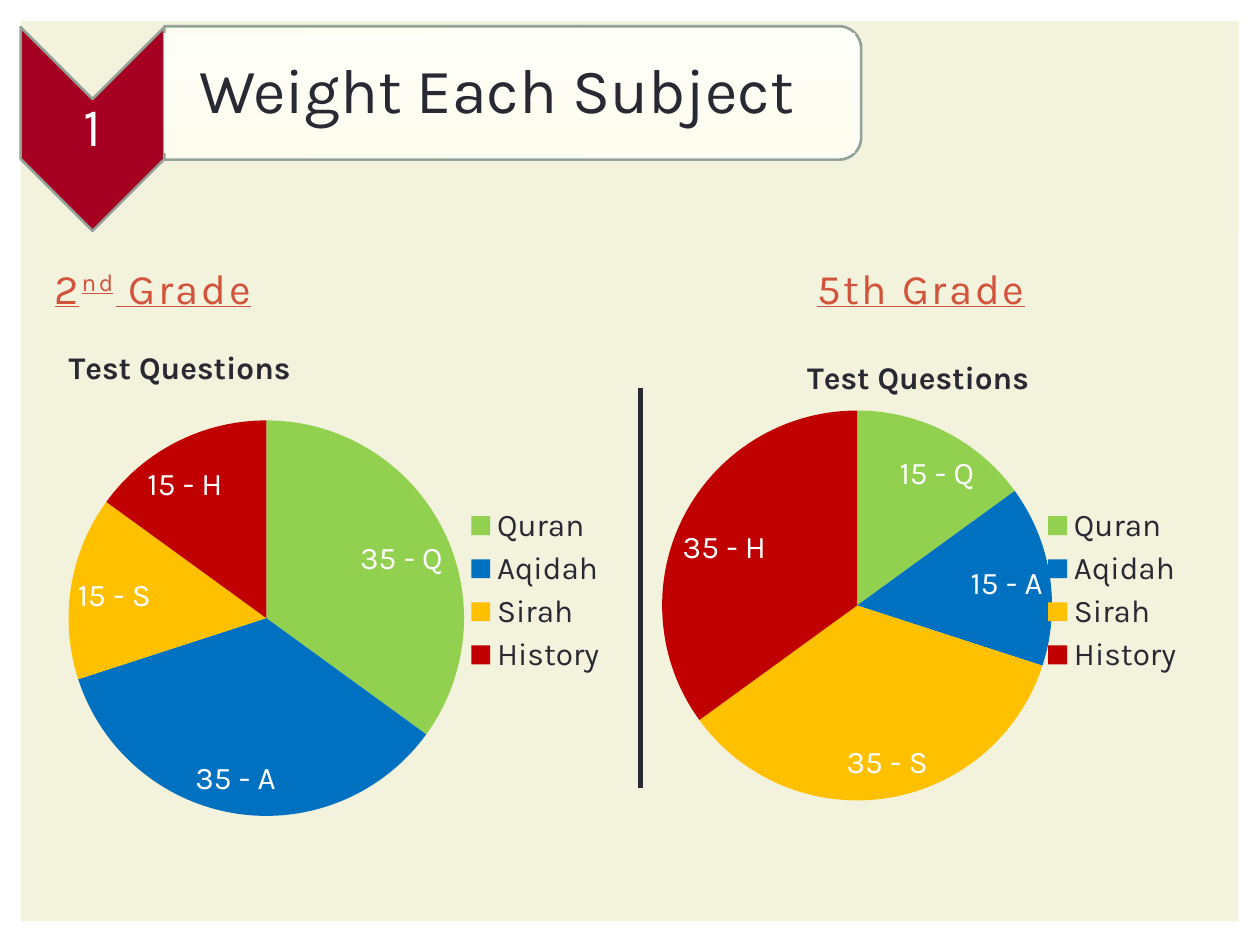
from lxml import etree
from pptx import Presentation
from pptx.chart.data import CategoryChartData
from pptx.dml.color import RGBColor
from pptx.enum.chart import XL_CHART_TYPE, XL_LABEL_POSITION, XL_LEGEND_POSITION
from pptx.enum.shapes import MSO_CONNECTOR, MSO_SHAPE
from pptx.enum.text import MSO_ANCHOR, PP_ALIGN
from pptx.oxml import parse_xml
from pptx.oxml.ns import qn
from pptx.util import Cm, Pt

PIE = XL_CHART_TYPE.PIE
BEST_FIT = XL_LABEL_POSITION.BEST_FIT
LEGEND_RIGHT = XL_LEGEND_POSITION.RIGHT
MIDDLE, BOTTOM = MSO_ANCHOR.MIDDLE, MSO_ANCHOR.BOTTOM
LEFT, CENTER = PP_ALIGN.LEFT, PP_ALIGN.CENTER
RECTANGLE = MSO_SHAPE.RECTANGLE
CHEVRON = MSO_SHAPE.CHEVRON
ROUND_TOP = MSO_SHAPE.ROUND_2_SAME_RECTANGLE
STRAIGHT = MSO_CONNECTOR.STRAIGHT

FONT = "Karla"
CREAM, DARK, RED, GREY, WHITE = "F3F2DC", "292934", "D2533C", "93A299", "FFFFFF"
BANNER_START, BANNER_END = "FDFCEF", "FEFEF9"
SUBJECT_COLORS = {"Quran": "92D050", "Aqidah": "0070C0", "Sirah": "FFC000", "History": "C00000"}
CHART_NAMESPACE = "http://schemas.openxmlformats.org/drawingml/2006/chart"


def color(value):
    return RGBColor.from_string(value)


def set_layout(element, **settings):
    """Give a chart title or plot area a manual layout, in fractions of the chart."""
    for layout in element.findall(qn("c:layout")):
        element.remove(layout)
    layout = parse_xml(f'<c:layout xmlns:c="{CHART_NAMESPACE}"><c:manualLayout/></c:layout>')
    for name, value in settings.items():
        etree.SubElement(layout[0], qn(f"c:{name}")).set("val", str(value))
    text = element.find(qn("c:tx"))
    element.insert(0 if text is None else 1, layout)


presentation = Presentation()
presentation.slide_width = Cm(25.4)
presentation.slide_height = Cm(19.05)
slide = presentation.slides.add_slide(presentation.slide_layouts[6])

# Panels, chevron and banner: kind, left, top, width, height, rotation, fill, line
shapes = [
    (RECTANGLE, 0.42, 4.55, 24.54, 14.02, 0, CREAM, None),
    (RECTANGLE, 0.42, 0.42, 24.56, 4.24, 0, CREAM, None),
    (CHEVRON, -0.19, 1.15, 4.11, 2.9, 90, "A50021", GREY),
    (ROUND_TOP, 8.99, -5.15, 2.69, 14.05, 90, None, GREY),
    (RECTANGLE, 3.31, 0.67, 13.92, 2.41, 0, None, None),
]
for kind, left, top, width, height, rotation, fill, line in shapes:
    shape = slide.shapes.add_shape(kind, Cm(left), Cm(top), Cm(width), Cm(height))
    shape.shadow.inherit = False
    shape.rotation = rotation
    if fill:
        shape.fill.solid()
        shape.fill.fore_color.rgb = color(fill)
    else:
        shape.fill.gradient()
        shape.fill.gradient_angle = 90
        for stop, value in zip(shape.fill.gradient_stops, (BANNER_START, BANNER_END)):
            stop.color.rgb = color(value)
    if line:
        shape.line.color.rgb = color(line)
        shape.line.width = Pt(1.5)
    else:
        shape.line.fill.background()
banner = shape

# Texts: shape, left inset, other insets, anchor, alignment, size, colour, runs
number = slide.shapes.add_textbox(Cm(0.42), Cm(1.98), Cm(2.9), Cm(1.24))
second_grade = slide.shapes.add_textbox(Cm(0.85), Cm(4.65), Cm(11.23), Cm(1.78))
fifth_grade = slide.shapes.add_textbox(Cm(15.04), Cm(4.65), Cm(6.55), Cm(1.78))
texts = [
    (banner, 0.71, 0.08, MIDDLE, LEFT, 36, DARK, ["Weight Each Subject"]),
    (number, 0.05, 0.05, MIDDLE, CENTER, 31, WHITE, ["1"]),
    (second_grade, 0.25, 0.13, BOTTOM, LEFT, 24, RED, ["2", "nd", " Grade"]),
    (fifth_grade, 0.63, 0.13, BOTTOM, CENTER, 24, RED, ["5th Grade"]),
]
for shape, left_inset, inset, anchor, alignment, size, text_color, runs in texts:
    frame = shape.text_frame
    frame.word_wrap = True
    frame.vertical_anchor = anchor
    frame.margin_left = Cm(left_inset)
    frame.margin_top = frame.margin_right = frame.margin_bottom = Cm(inset)
    paragraph = frame.paragraphs[0]
    paragraph.alignment = alignment
    is_heading = text_color == RED
    paragraph.line_spacing = 1.0 if is_heading else 0.9
    for text in runs:
        run = paragraph.add_run()
        run.text = text
        run.font.name = FONT
        run.font.size = Pt(size)
        run.font.color.rgb = color(text_color)
        if is_heading:
            run.font.underline = True
            run._r.get_or_add_rPr().set("spc", "150")
        if text == "nd":
            run._r.get_or_add_rPr().set("baseline", "30000")

# Pie charts: left, questions per subject, plot area (x, y, w, h), title place
charts = [
    (1.27, (35, 35, 15, 15), (0.01, 0.12, 0.71, 0.87), (0, 0.01)),
    (12.9, (15, 15, 35, 35), (0.04, 0.1, 0.7, 0.86), (0.29, 0.03)),
]
for left, questions, plot_place, title_place in charts:
    data = CategoryChartData()
    data.categories = list(SUBJECT_COLORS)
    data.add_series("Test Questions", questions)
    chart = slide.shapes.add_chart(PIE, Cm(left), Cm(6.78), Cm(11.23), Cm(10.24), data).chart
    chart.font.name = FONT
    chart.font.size = Pt(18)
    chart.font.color.rgb = color(DARK)

    chart.has_title = True
    title_run = chart.chart_title.text_frame.paragraphs[0].add_run()
    title_run.text = "Test Questions"
    title_run.font.name = FONT
    title_run.font.size = Pt(18)
    title_run.font.bold = True
    title_run.font.color.rgb = color(DARK)
    x, y = title_place
    set_layout(chart.chart_title._element, xMode="edge", yMode="edge", x=x, y=y)

    chart.has_legend = True
    chart.legend.position = LEGEND_RIGHT
    chart.legend.include_in_layout = False

    x, y, width, height = plot_place
    plot = chart.plots[0]
    plot.vary_by_categories = True
    set_layout(plot._element.getparent(), layoutTarget="inner", xMode="edge", yMode="edge",
               x=x, y=y, w=width, h=height)
    for index, (subject, value) in enumerate(SUBJECT_COLORS.items()):
        point = plot.series[0].points[index]
        point.format.fill.solid()
        point.format.fill.fore_color.rgb = color(value)
        label_run = point.data_label.text_frame.paragraphs[0].add_run()
        label_run.text = f"{questions[index]} - {subject[0]}"
        label_run.font.name = FONT
        label_run.font.size = Pt(18)
        label_run.font.color.rgb = color(WHITE)
        point.data_label.position = BEST_FIT

divider = slide.shapes.add_connector(STRAIGHT, Cm(12.91), Cm(7.82), Cm(12.91), Cm(15.88))
divider.line.color.rgb = color(DARK)
divider.line.width = Pt(2.5)
etree.SubElement(divider._element.spPr, qn("a:effectLst"))

presentation.save("out.pptx")
